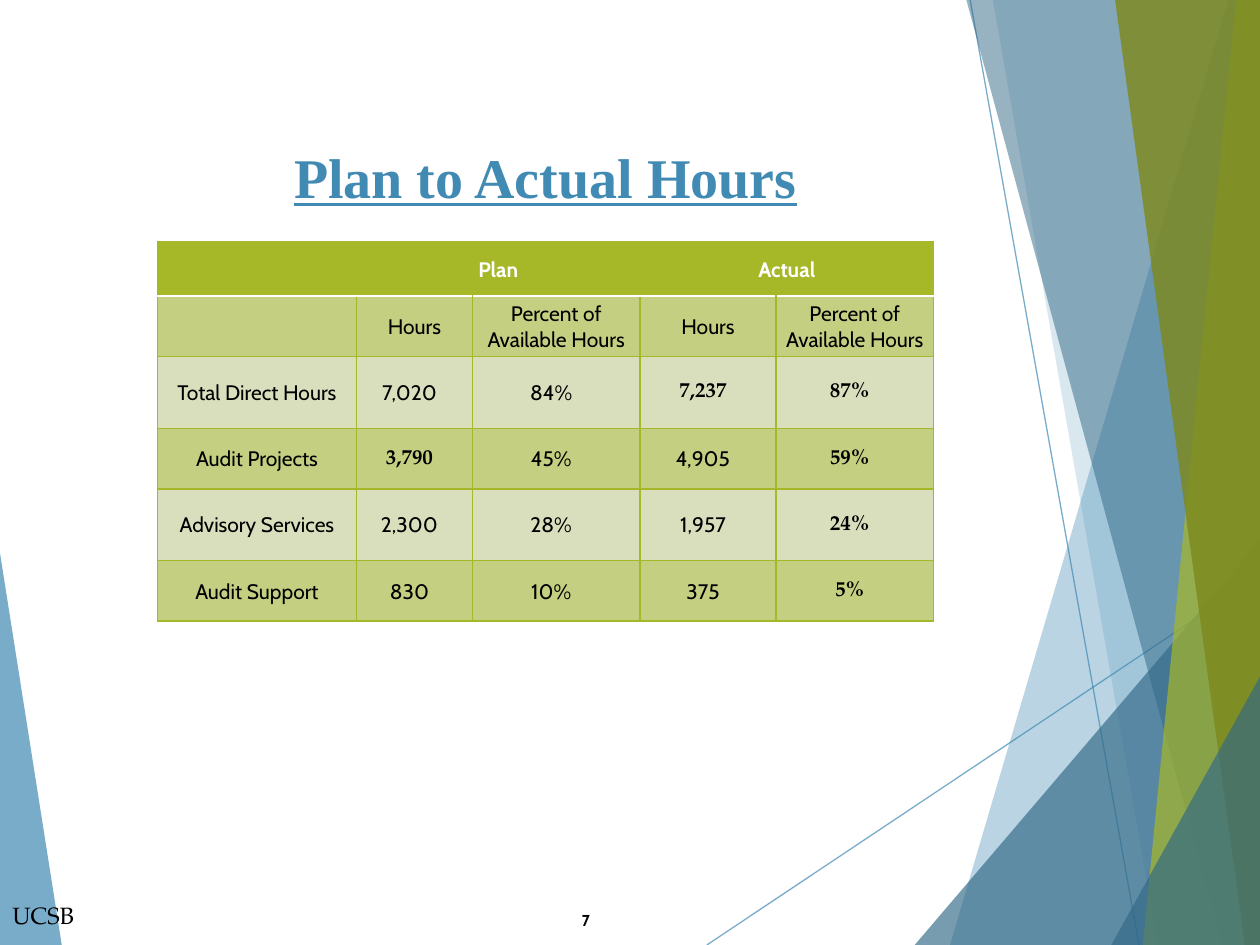
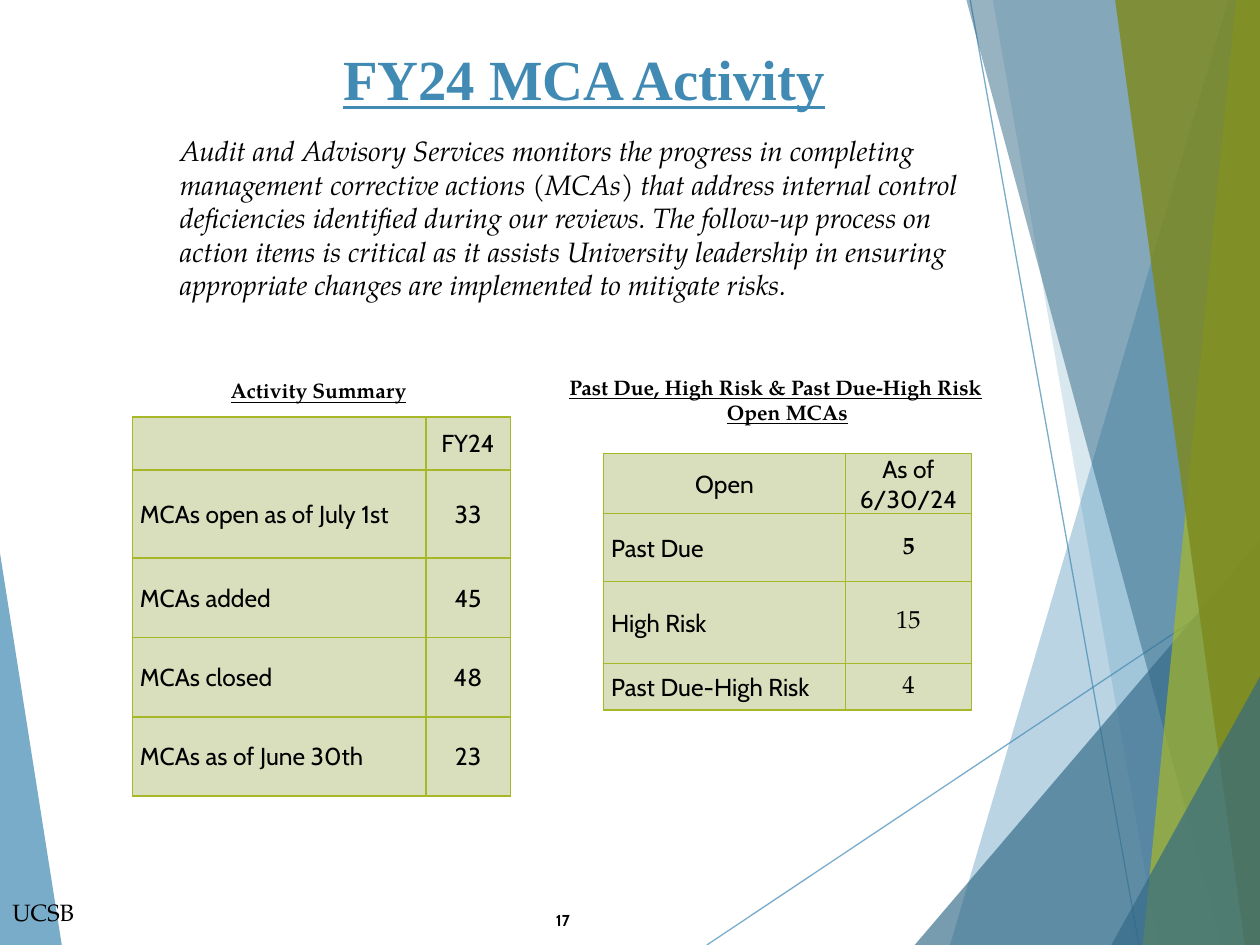
from dataclasses import dataclass, field

from lxml import etree
from pptx import Presentation
from pptx import util as u
from pptx.dml import color
from pptx.enum import shapes, text
from pptx.oxml import ns

PX = 9144
BLUE, NAVY, LIME, OLIVE = "418AB3", "316886", "A6B727", "7D891D"
BLACK, WHITE = "000000", "FFFFFF"
PALE, BAND = "D9DFBD", "C4CF81"
SANS, SERIF, TIMES = "Cabin", "TeX Gyre Pagella", "Times New Roman"
LEFT, MID, RIGHT = text.PP_ALIGN.LEFT, text.PP_ALIGN.CENTER, text.PP_ALIGN.RIGHT
TOP, CENTER = text.MSO_ANCHOR.TOP, text.MSO_ANCHOR.MIDDLE


@dataclass
class Style:
    size: float
    face: str = SANS
    tint: str = BLACK
    bold: bool = False
    slant: bool = False
    under: bool = False


@dataclass
class Facet:
    points: list[tuple[int, int]]
    tint: str
    alpha: int


@dataclass
class Ray:
    start: tuple[int, int]
    end: tuple[int, int]


@dataclass
class Label:
    words: str
    box: tuple[int, int, int, int]
    style: Style
    aligns: tuple = (LEFT,)
    anchor: text.MSO_ANCHOR = TOP
    wrap: bool = True
    left: int = 10
    top: int = 5
    lead: int = 0


@dataclass
class Grid:
    spot: tuple[int, int]
    cols: list[int]
    rows: list[int]
    cells: list[list[str]]
    fills: list[str]
    size: int
    serif: set = field(default_factory=set)
    bold: set = field(default_factory=set)
    merges: list = field(default_factory=list)
    white: bool = False
    names: text.PP_ALIGN = MID
    inset: int = 1


DECOR = [
    Facet([(0, 439), (49, 750), (0, 750)], BLUE, 70),
    Ray((561, 750), (1000, 457)),
    Ray((770, 0), (904, 750)),
    Facet([(975, 0), (754, 750), (1000, 750), (1000, 0)], BLUE, 36),
    Facet([(788, 0), (919, 750), (1000, 750), (1000, 0)], BLUE, 20),
    Facet([(726, 750), (1000, 429), (1000, 750)], NAVY, 66),
    Facet([(767, 0), (970, 750), (1000, 750), (1000, 0)], NAVY, 50),
    Facet([(981, 0), (907, 750), (1000, 750), (1000, 0)], LIME, 70),
    Facet([(885, 0), (988, 750), (1000, 750), (1000, 0)], OLIVE, 82),
    Facet([(882, 750), (1000, 537), (1000, 750)], NAVY, 66),
]

HOURS = Grid(
    spot=(125, 192),
    cols=[158, 92, 133, 108, 125],
    rows=[43, 48, 57, 48, 57, 48],
    cells=[
        ["", "Plan", "", "Actual", ""],
        ["", "Hours", "Percent of Available Hours", "Hours", "Percent of Available Hours"],
        ["Total Direct Hours", "7,020", "84%", "7,237", "87%"],
        ["Audit Projects", "3,790", "45%", "4,905", "59%"],
        ["Advisory Services", "2,300", "28%", "1,957", "24%"],
        ["Audit Support", "830", "10%", "375", "5%"],
    ],
    fills=[LIME, BAND, PALE, BAND, PALE, BAND],
    size=12,
    serif={(2, 3), (2, 4), (3, 1), (3, 4), (4, 4), (5, 4)},
    bold={(0, 1), (0, 3), (2, 3), (2, 4), (3, 1), (3, 4), (4, 4), (5, 4)},
    merges=[((0, 1), (0, 2)), ((0, 3), (0, 4))],
    white=True,
    inset=9,
)

SUMMARY = Grid(
    spot=(105, 331),
    cols=[233, 67],
    rows=[42, 70, 63, 63, 63],
    cells=[
        ["", "FY24"],
        ["MCAs open as of July 1st", "33"],
        ["MCAs added", "45"],
        ["MCAs closed", "48"],
        ["MCAs as of June 30th", "23"],
    ],
    fills=[PALE] * 5,
    size=14,
    names=LEFT,
)

RISKS = Grid(
    spot=(479, 360),
    cols=[192, 100],
    rows=[43, 54, 65, 37],
    cells=[
        ["Open", "As of\n6/30/24"],
        ["Past Due", "5"],
        ["High Risk", "15"],
        ["Past Due-High Risk", "4"],
    ],
    fills=[PALE] * 4,
    size=14,
    serif={(1, 1), (2, 1), (3, 1)},
    bold={(1, 1)},
    names=LEFT,
)

HEAD = Style(12, SERIF, bold=True, under=True)
INTRO = (
    "Audit and Advisory Services monitors the progress in completing management "
    "corrective actions (MCAs) that address internal control deficiencies identified "
    "during our reviews. The follow-up process on action items is critical as it "
    "assists University leadership in ensuring appropriate changes are implemented "
    "to mitigate risks."
)
NOTES = [
    Label("Activity Summary", (169, 287, 222, 40), HEAD, left=14, top=13),
    Label("Past Due, High Risk & Past Due-High Risk\nOpen MCAs", (342, 284, 566, 61),
          HEAD, (LEFT, MID), top=13, lead=100),
    Label(INTRO, (133, 101, 659, 145), Style(16, SERIF, slant=True)),
]


def px(value: int) -> int:
    return u.Emu(value * PX)


def rgb(code: str) -> color.RGBColor:
    return color.RGBColor.from_string(code)


def paint(fill, code: str) -> None:
    fill.solid()
    fill.fore_color.rgb = rgb(code)


def fade(shape, alpha: int) -> None:
    for node in list(shape.element.iter(ns.qn("a:srgbClr"))):
        etree.SubElement(node, ns.qn("a:alpha")).set("val", str(alpha * 1000))


def format_text(frame, style: Style, aligns: tuple) -> None:
    for i, para in enumerate(frame.paragraphs):
        para.alignment = aligns[min(i, len(aligns) - 1)]
        for run in para.runs:
            font = run.font
            font.size, font.name = u.Pt(style.size), style.face
            font.bold, font.italic, font.underline = style.bold, style.slant, style.under
            font.color.rgb = rgb(style.tint)


def add_facet(slide, facet: Facet):
    first, *rest = facet.points
    pen = slide.shapes.build_freeform(*first, scale=PX)
    pen.add_line_segments(rest, close=True)
    shape = pen.convert_to_shape()
    shape.shadow.inherit = False
    paint(shape.fill, facet.tint)
    shape.line.fill.background()
    fade(shape, facet.alpha)
    return shape


def add_ray(slide, ray: Ray):
    ends = [px(n) for n in ray.start + ray.end]
    line = slide.shapes.add_connector(shapes.MSO_CONNECTOR.STRAIGHT, *ends)
    line.line.width = u.Pt(0.75)
    paint(line.line.fill, BLUE)
    fade(line, 70)
    etree.SubElement(line.element.spPr, ns.qn("a:effectLst"))
    return line


def dress(deck, layout) -> None:
    draft = deck.slides[0]
    for i, part in enumerate(DECOR):
        draw = add_ray if isinstance(part, Ray) else add_facet
        node = draw(draft, part).element
        next(node.iter(ns.qn("p:cNvPr"))).set("id", str(100 + i))
        layout.shapes.element.append(node)


def add_label(slide, label: Label) -> None:
    box = slide.shapes.add_textbox(*map(px, label.box))
    frame = box.text_frame
    frame.word_wrap = label.wrap
    frame.vertical_anchor = label.anchor
    frame.margin_left, frame.margin_top = px(label.left), px(label.top)
    frame.text = label.words
    format_text(frame, label.style, label.aligns)
    if label.lead:
        frame.paragraphs[0]._p.get_or_add_pPr().set("marL", str(px(label.lead)))


def add_edges(cell, tops: str, base: str) -> None:
    props = cell._tc.get_or_add_tcPr()
    sides = {"lnL": LIME, "lnR": LIME, "lnT": tops, "lnB": base}
    for i, (side, code) in enumerate(sides.items()):
        line = etree.Element(ns.qn("a:" + side))
        line.set("w", str(u.Pt(1.5 if code == WHITE else 1)))
        fill = etree.SubElement(line, ns.qn("a:solidFill"))
        etree.SubElement(fill, ns.qn("a:srgbClr")).set("val", code)
        props.insert(i, line)


def add_grid(slide, grid: Grid) -> None:
    size = (sum(grid.cols), sum(grid.rows))
    table = slide.shapes.add_table(len(grid.rows), len(grid.cols),
                                   *map(px, grid.spot + size)).table
    table.first_row = table.horz_banding = False
    for col, width in zip(table.columns, grid.cols):
        col.width = px(width)
    for row, height in zip(table.rows, grid.rows):
        row.height = px(height)
    for start, end in grid.merges:
        table.cell(*start).merge(table.cell(*end))
    for r, words in enumerate(grid.cells):
        for c, word in enumerate(words):
            cell = table.cell(r, c)
            name = c == 0 and r > 0 and grid.names == LEFT
            value = c > 0 and r > 1
            cell.margin_left = px(6 if name else 1)
            cell.margin_right = px(grid.inset if value else 1)
            cell.margin_top, cell.margin_bottom = px(1), 0
            cell.vertical_anchor = CENTER
            paint(cell.fill, grid.fills[r])
            add_edges(cell, WHITE if grid.white and r == 1 else LIME,
                      WHITE if grid.white and r == 0 else LIME)
            if word:
                cell.text_frame.text = word
                style = Style(grid.size, SERIF if (r, c) in grid.serif else SANS,
                              WHITE if grid.fills[r] == LIME else BLACK,
                              (r, c) in grid.bold)
                format_text(cell.text_frame, style, (LEFT if name else MID,))


def set_title(slide, words: str, box: tuple[int, int, int, int], size: float) -> None:
    title = slide.shapes.title
    title.left, title.top, title.width, title.height = map(px, box)
    frame = title.text_frame
    frame.auto_size = text.MSO_AUTO_SIZE.NONE
    frame.vertical_anchor = TOP
    frame.text = words
    format_text(frame, Style(size, TIMES, BLUE, bold=True, under=True), (MID,))


def add_footer(slide, number: str, left: int, top: int) -> None:
    add_label(slide, Label(number, (left, 710, 45, 40), Style(9, bold=True),
                           (RIGHT,), CENTER))
    add_label(slide, Label("UCSB", (0, top, 70, 33), Style(13.5, SERIF), wrap=False))


def main() -> None:
    deck = Presentation()
    deck.slide_width, deck.slide_height = px(1000), px(750)
    layout = deck.slide_layouts[5]
    hours, activity = [deck.slides.add_slide(layout) for _ in range(2)]
    dress(deck, layout)

    set_title(hours, "Plan to Actual Hours", (-17, 108, 900, 125), 32)
    add_grid(hours, HOURS)
    add_footer(hours, "7", 433, 710)

    set_title(activity, "FY24 MCA Activity", (42, 30, 843, 61), 32.4)
    add_footer(activity, "17", 417, 708)
    for grid in (SUMMARY, RISKS):
        add_grid(activity, grid)
    for note in NOTES:
        add_label(activity, note)

    deck.save("out.pptx")


if __name__ == "__main__":
    main()
